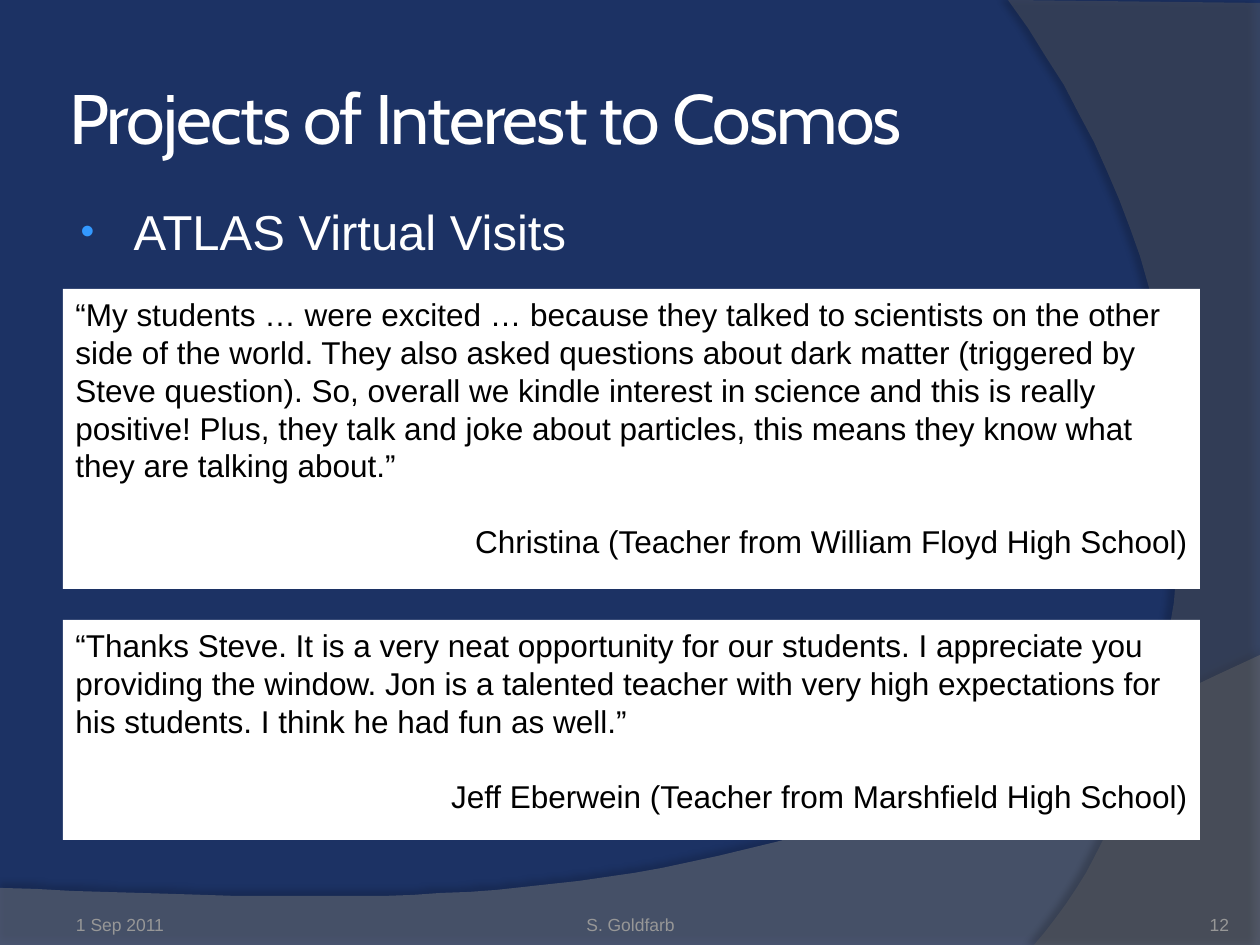
from lxml import etree
from pptx import Presentation
from pptx.dml.color import RGBColor
from pptx.enum.shapes import MSO_SHAPE
from pptx.enum.text import MSO_ANCHOR as Anchor, MSO_AUTO_SIZE as AutoSize, PP_ALIGN as Align
from pptx.oxml.ns import qn
from pptx.util import Emu, Pt

PX = 914400 / 126
NAVY = RGBColor(0x1C, 0x32, 0x64)
WHITE = RGBColor(0xFF, 0xFF, 0xFF)
BLACK = RGBColor(0, 0, 0)
BULLET_BLUE = RGBColor(0x33, 0x99, 0xFF)
FOOTER_GRAY = RGBColor(0x97, 0x97, 0x97)
WAVE_GRAY = RGBColor(0x7F, 0x7F, 0x7F)
ARC_GRAY = RGBColor(0x5E, 0x5E, 0x5E)

QUOTES = [
    ((63, 289, 1137, 300),
     "“My students … were excited … because they talked to scientists on the other side of "
     "the world. They also asked questions about dark matter (triggered by Steve question). "
     "So, overall we kindle interest in science and this is really positive! Plus, they talk "
     "and joke about particles, this means they know what they are talking about.”",
     "Christina (Teacher from William Floyd High School)"),
    ((63, 620, 1137, 220),
     "“Thanks Steve. It is a very neat opportunity for our students. I appreciate you "
     "providing the window. Jon is a talented teacher with very high expectations for his "
     "students. I think he had fun as well.”",
     "Jeff Eberwein (Teacher from Marshfield High School)"),
]
FOOTERS = [
    ((63, 885, 294, 50), "1 Sep 2011", Align.LEFT, 13),
    ((431, 885, 399, 50), "S. Goldfarb", Align.CENTER, 0),
    ((1124, 885, 105, 50), "12", Align.RIGHT, 0),
]


def px(length):
    return Emu(round(length * PX))


def place(shape, box):
    shape.left, shape.top, shape.width, shape.height = map(px, box)


def set_margins(frame, left, top, right, bottom):
    frame.margin_left, frame.margin_top = px(left), px(top)
    frame.margin_right, frame.margin_bottom = px(right), px(bottom)


def style(para, size, color, name="Arial", align=Align.LEFT):
    para.alignment = align
    para.font.size, para.font.name = Pt(size), name
    para.font.color.rgb = color


def curve(start, control_1, control_2, end, steps=40):
    """Points along a cubic Bézier curve."""
    for step in range(steps + 1):
        t = step / steps
        weights = ((1 - t) ** 3, 3 * t * (1 - t) ** 2, 3 * t * t * (1 - t), t ** 3)
        yield tuple(sum(w * point[axis] for w, point in
                        zip(weights, (start, control_1, control_2, end)))
                    for axis in (0, 1))


def add_backdrop(page, points, color, opacity, shadow_opacity, blur, distance, angle):
    """Translucent outline with a soft shadow, behind everything else."""
    builder = page.shapes.build_freeform(*points[0], scale=PX)
    builder.add_line_segments(points[1:], close=True)
    shape = builder.convert_to_shape()
    shape.fill.solid()
    shape.fill.fore_color.rgb = color
    shape.line.fill.background()
    fill_color = shape._element.spPr.find(qn("a:solidFill"))[0]
    etree.SubElement(fill_color, qn("a:alpha"), val=str(opacity * 1000))

    shape.shadow.inherit = False
    effects = shape._element.spPr.find(qn("a:effectLst"))
    shadow = etree.SubElement(effects, qn("a:outerShdw"), blurRad=str(Pt(blur)),
                              dist=str(Pt(distance)), dir=str(angle * 60000),
                              rotWithShape="0")
    shadow_color = etree.SubElement(shadow, qn("a:srgbClr"), val=str(BLACK))
    etree.SubElement(shadow_color, qn("a:alpha"), val=str(shadow_opacity * 1000))
    page.shapes._spTree.insert(2, shape._element)


def add_background(page):
    page.background.fill.solid()
    page.background.fill.fore_color.rgb = NAVY
    arc = [(1260, 3), (1260, 945),
           *curve((1034, 945), (1178, 780), (1283, 378), (1008, 0))]
    wave = [(0, 888), (0, 946), (1260, 946),
            *curve((1260, 655), (704, 919), (493, 906), (0, 888))]
    add_backdrop(page, arc, ARC_GRAY, 40, 45, 4, 4, 180)
    add_backdrop(page, wave, WAVE_GRAY, 45, 35, 4, 3.5, 270)


def add_title(page, box, text):
    title = page.shapes.title
    place(title, box)
    frame = title.text_frame
    frame.text = text
    frame.auto_size, frame.vertical_anchor = AutoSize.NONE, Anchor.MIDDLE
    set_margins(frame, 6, 6, 6, 6)
    para = frame.paragraphs[0]
    style(para, 40, WHITE, "Cabin")
    para.runs[0].font._element.set("spc", "-100")


def add_topic(page, box, text):
    body = page.placeholders[1]
    place(body, box)
    frame = body.text_frame
    frame.text = text
    frame.auto_size = AutoSize.NONE
    para = frame.paragraphs[0]
    style(para, 28, WHITE)
    props = para._p.get_or_add_pPr()
    props.set("marL", str(px(58)))
    props.set("indent", str(px(-53)))
    # Bullet parts come before the font defaults in the schema
    bullet_color = etree.Element(qn("a:buClr"))
    etree.SubElement(bullet_color, qn("a:srgbClr"), val=str(BULLET_BLUE))
    parts = [bullet_color,
             etree.Element(qn("a:buSzPct"), val="80000"),
             etree.Element(qn("a:buFont"), typeface="Arial"),
             etree.Element(qn("a:buChar"), char="•")]
    for index, part in enumerate(parts):
        props.insert(index, part)


def add_quote(page, box, quote, speaker):
    card = page.shapes.add_shape(MSO_SHAPE.RECTANGLE, *map(px, box))
    card.shadow.inherit = False
    card.fill.solid()
    card.fill.fore_color.rgb = WHITE
    card.line.fill.background()
    frame = card.text_frame
    frame.word_wrap, frame.vertical_anchor = True, Anchor.TOP
    frame.text = quote
    style(frame.paragraphs[0], 18, BLACK)
    credit = frame.add_paragraph()
    credit.text = speaker
    style(credit, 18, BLACK, align=Align.RIGHT)
    credit.space_before = Pt(21.6)


def add_footer(page, box, text, align, side_margin):
    frame = page.shapes.add_textbox(*map(px, box)).text_frame
    frame.word_wrap, frame.vertical_anchor = True, Anchor.BOTTOM
    set_margins(frame, side_margin, 0, side_margin, 0)
    frame.text = text
    style(frame.paragraphs[0], 10, FOOTER_GRAY, align=align)


def main():
    deck = Presentation()
    deck.slide_width, deck.slide_height = px(1260), px(945)
    page = deck.slides.add_slide(deck.slide_layouts[1])
    add_background(page)
    add_title(page, (63, 38, 1137, 158), "Projects of Interest to Cosmos")
    add_topic(page, (63, 195, 1137, 649), "ATLAS Virtual Visits")
    for quote in QUOTES:
        add_quote(page, *quote)
    for footer in FOOTERS:
        add_footer(page, *footer)
    deck.save("out.pptx")


if __name__ == "__main__":
    main()
